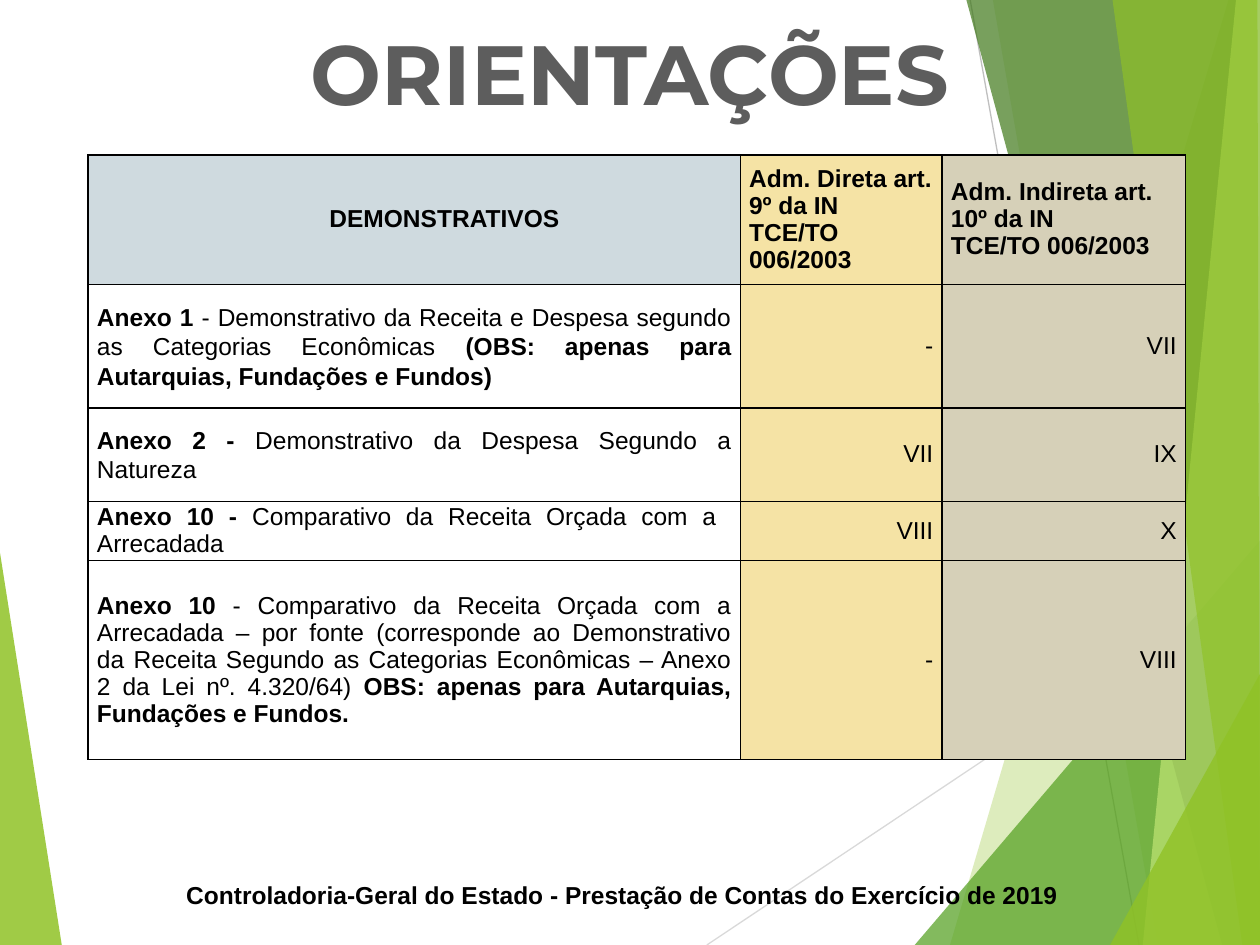
from lxml import etree
from pptx import Presentation
from pptx.dml.color import RGBColor
from pptx.enum.shapes import MSO_CONNECTOR
from pptx.enum.text import MSO_ANCHOR, PP_ALIGN
from pptx.oxml.ns import qn
from pptx.util import Inches, Pt

LINE = MSO_CONNECTOR.STRAIGHT
MID = MSO_ANCHOR.MIDDLE
LEFT, CENTER = PP_ALIGN.LEFT, PP_ALIGN.CENTER
RIGHT, JUST = PP_ALIGN.RIGHT, PP_ALIGN.JUSTIFY

BLACK = RGBColor(0x00, 0x00, 0x00)
GREY = RGBColor(0x5D, 0x5D, 0x5D)
SILVER = RGBColor(0xBF, 0xBF, 0xBF)
PALE = RGBColor(0xD9, 0xD9, 0xD9)
LIME = RGBColor(0x90, 0xC2, 0x26)
LEAF = RGBColor(0x54, 0xA0, 0x21)
MOSS = RGBColor(0x3F, 0x78, 0x19)
MINT = RGBColor(0xC0, 0xE4, 0x74)
BLUE = RGBColor(0xCF, 0xDA, 0xDF)
SAND = RGBColor(0xF5, 0xE3, 0xA5)
CLAY = RGBColor(0xD6, 0xD0, 0xB8)

WIDE, HIGH = Inches(10), Inches(7.5)
PAGE = (0, 0, WIDE, HIGH)

# Facets in percent of the page: colour, opacity, corners
FACETS = [
    (LIME, 85, [(0, 58.5), (4.9, 100), (0, 100)]),
    (LIME, 30, [(97.5, 0), (75.4, 100), (100, 100), (100, 0)]),
    (LIME, 20, [(78.8, 0), (91.9, 100), (100, 100), (100, 0)]),
    (LEAF, 72, [(72.6, 100), (100, 57.2), (100, 100)]),
    (MOSS, 70, [(76.7, 0), (97, 100), (100, 100), (100, 0)]),
    (MINT, 70, [(98.1, 0), (90.7, 100), (100, 100), (100, 0)]),
    (LIME, 65, [(88.3, 0), (98.6, 100), (100, 100), (99.8, 0)]),
    (LIME, 80, [(88.1, 100), (100, 71.3), (100, 100)]),
]
RAYS = [(PALE, (56.1, 100), (100, 60.9)), (SILVER, (77, 0), (90.4, 100))]

# Each text is a list of paragraphs, each paragraph a list of (words, bold)
HEADS = [
    ([[("DEMONSTRATIVOS", True)]], CENTER, 0.48),
    ([[("Adm. Direta art. 9º da IN TCE/TO 006/2003", True)]], LEFT, 0),
    ([[("Adm. Indireta art. 10º da IN", True)],
      [("TCE/TO 006/2003", True)]], LEFT, 0),
]
# Runs of the statement, line spacing, direct, indirect
ROWS = [
    ([("Anexo 1", True),
      (" - Demonstrativo da Receita e Despesa segundo as Categorias Econômicas ",
       False),
      ("(OBS: apenas para Autarquias, Fundações e Fundos)", True)],
     1.07, "-", "VII"),
    ([("Anexo 2 - ", True),
      ("Demonstrativo da Despesa Segundo a Natureza", False)],
     1.07, "VII", "IX"),
    ([("Anexo 10 - ", True),
      ("Comparativo da Receita Orçada com a  Arrecadada", False)],
     0.98, "VIII", "X"),
    ([("Anexo 10", True),
      (" - Comparativo da Receita Orçada com a Arrecadada – por fonte "
       "(corresponde ao Demonstrativo da Receita Segundo as Categorias "
       "Econômicas – Anexo 2 da Lei nº. 4.320/64) ", False),
      ("OBS: apenas para Autarquias, Fundações e Fundos.", True)],
     0.98, "-", "VIII"),
]
COLS = [5.17, 1.6, 1.93]
TALL = [1.03, 0.98, 0.74, 0.47, 1.58]


def share(box, x, y, w, h):
    """Box given by percentages of another box."""
    left, top, wide, high = box
    return (int(left + wide * x / 100), int(top + high * y / 100),
            int(wide * w / 100), int(high * h / 100))


def spot(box, point):
    return share(box, *point, 0, 0)[:2]


def write(frame, paras, size=14, font="Arial", color=BLACK, align=LEFT,
          space=None, indent=0):
    frame.word_wrap = True
    for i, runs in enumerate(paras):
        para = frame.add_paragraph() if i else frame.paragraphs[0]
        para.alignment = align
        if space:
            para.line_spacing = space
        if indent:
            para._p.get_or_add_pPr().set("indent", str(Inches(indent)))
        for words, bold in runs:
            run = para.add_run()
            run.text = words
            run.font.size, run.font.name = Pt(size), font
            run.font.bold = bold
            run.font.color.rgb = color


def facet(slide, box, color, alpha, points):
    start, *rest = [spot(box, p) for p in points]
    pen = slide.shapes.build_freeform(*start)
    pen.add_line_segments(rest, close=True)
    shape = pen.convert_to_shape()
    shape.shadow.inherit = False
    shape.fill.solid()
    shape.fill.fore_color.rgb = color
    shape.line.fill.background()
    tone = shape._element.spPr.find(qn("a:solidFill"))[0]
    etree.SubElement(tone, qn("a:alpha")).set("val", str(alpha * 1000))


def ray(slide, box, color, start, end):
    line = slide.shapes.add_connector(LINE, *spot(box, start), *spot(box, end))
    line.line.color.rgb = color
    line.line.width = Pt(0.75)
    etree.SubElement(line._element.spPr, qn("a:effectLst"))


def backdrop(slide, box):
    facet(slide, box, *FACETS[0])
    for item in RAYS:
        ray(slide, box, *item)
    for item in FACETS[1:]:
        facet(slide, box, *item)


def border(cell):
    props = cell._tc.get_or_add_tcPr()
    for side in ("lnL", "lnR", "lnT", "lnB"):
        edge = etree.SubElement(props, qn("a:" + side), w=str(Pt(1)))
        fill = etree.SubElement(edge, qn("a:solidFill"))
        etree.SubElement(fill, qn("a:srgbClr"), val=str(BLACK))


def put(cell, paras, tint, **form):
    cell.margin_left = cell.margin_right = Inches(0.07)
    cell.margin_top = cell.margin_bottom = 0
    cell.vertical_anchor = MID
    border(cell)
    if tint:
        cell.fill.solid()
        cell.fill.fore_color.rgb = tint
    else:
        cell.fill.background()
    write(cell.text_frame, paras, **form)


def grid(slide, box):
    table = slide.shapes.add_table(len(TALL), len(COLS), *box).table
    table.first_row = table.horz_banding = False
    for col, part in zip(table.columns, COLS):
        col.width = int(box[2] * part / sum(COLS))
    for row, part in zip(table.rows, TALL):
        row.height = int(box[3] * part / sum(TALL))
    # Heading row
    for c, (paras, align, indent) in enumerate(HEADS):
        put(table.cell(0, c), paras, (BLUE, SAND, CLAY)[c],
            align=align, indent=indent, space=0.98)
    # Statements and their items
    for r, (runs, space, *marks) in enumerate(ROWS, 1):
        put(table.cell(r, 0), [runs], None, align=JUST, space=space)
        for c, mark in enumerate(marks, 1):
            put(table.cell(r, c), [[(mark, False)]], (SAND, CLAY)[c - 1],
                align=RIGHT, space=0.98)


def footer(slide, box):
    note = slide.shapes.add_textbox(*box)
    words = "Controladoria-Geral do Estado - Prestação de Contas do Exercício de 2019"
    write(note.text_frame, [[(words, True)]], align=CENTER)


def heading(slide, box):
    title = slide.shapes.title
    title.left, title.top, title.width, title.height = box
    title.text_frame.vertical_anchor = MID
    write(title.text_frame, [[("ORIENTAÇÕES", True)]], size=48,
          font="Montserrat", color=GREY, align=CENTER)
    slide.shapes._spTree.append(title._element)  # bring to front


def main():
    deck = Presentation()
    deck.slide_width, deck.slide_height = WIDE, HIGH
    slide = deck.slides.add_slide(deck.slide_layouts[5])
    backdrop(slide, PAGE)
    footer(slide, share(PAGE, 5.5, 92.5, 87.8, 4.5))
    grid(slide, share(PAGE, 7, 16.4, 87.1, 64))
    heading(slide, share(PAGE, 0.6, 1.6, 98.8, 12.1))
    deck.save("out.pptx")


if __name__ == "__main__":
    main()
